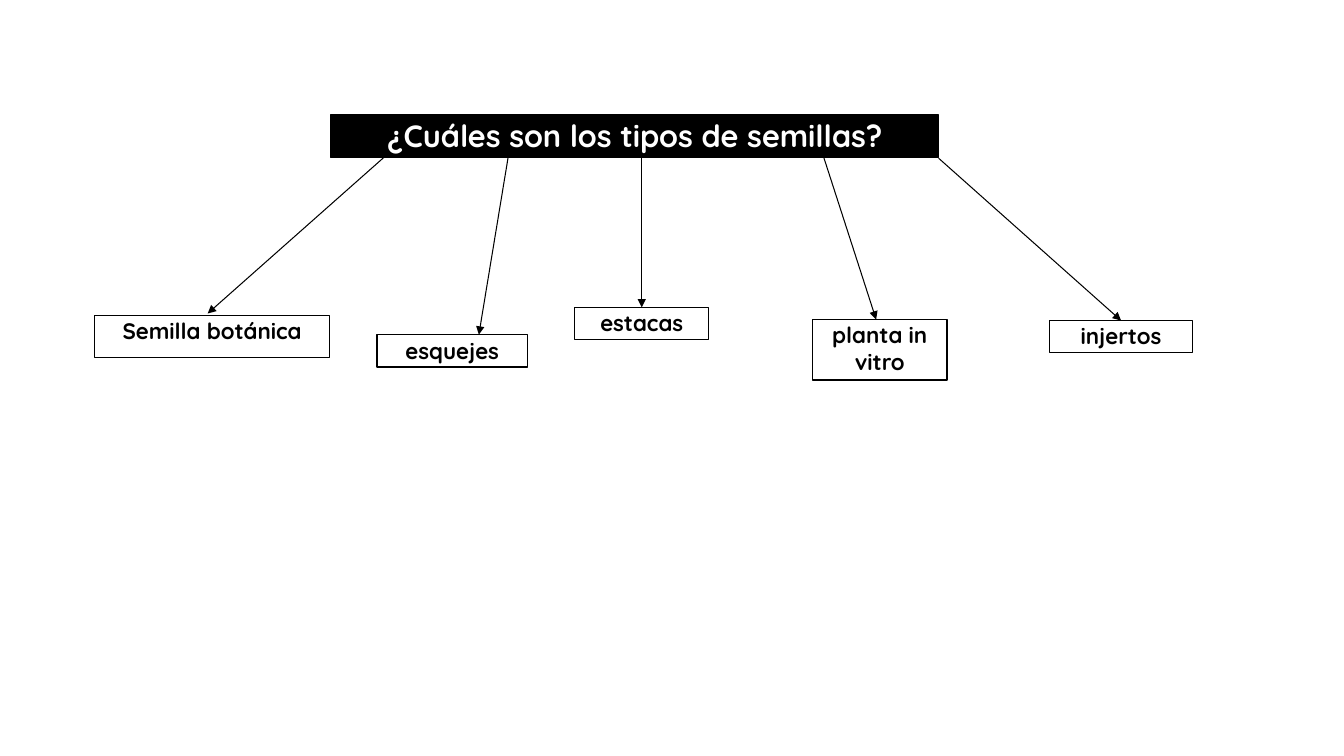
from pptx import Presentation
from pptx.dml.color import RGBColor as Rgb
from pptx.enum.shapes import MSO_CONNECTOR as Link, MSO_SHAPE as Form
from pptx.enum.text import MSO_ANCHOR as Anchor, MSO_AUTO_SIZE as Auto, PP_ALIGN as Align
from pptx.oxml.ns import qn
from pptx.util import Inches, Pt
from lxml.etree import SubElement as Sub

theme = {
    "black": Rgb(0, 0, 0),
    "white": Rgb(255, 255, 255),
    "font": "Quicksand",
    "head": Pt(22),
    "body": Pt(16),
    "edge": Pt(1),
    "arrow": Pt(0.75),
}
frame = {
    "margin_left": Inches(0.05),
    "margin_right": Inches(0.05),
    "margin_top": Inches(0.02),
    "margin_bottom": Inches(0.02),
    "word_wrap": True,
    "auto_size": Auto.NONE,
    "vertical_anchor": Anchor.TOP,
}

deck = Presentation()
deck.slide_width, deck.slide_height = Inches(13.33), Inches(7.5)
slide = deck.slides.add_slide(deck.slide_layouts[5])
shapes = slide.shapes


def scale(*shares):
    sides = deck.slide_width, deck.slide_height
    return [round(sides[i % 2] * share / 100) for i, share in enumerate(shares)]


def dress(box, text, fill, ink, size):
    box.fill.solid()
    box.fill.fore_color.rgb = fill
    box.line.color.rgb = theme["black"]
    box.line.width = theme["edge"]
    for name, value in frame.items():
        setattr(box.text_frame, name, value)
    box.text_frame.text = text
    para = box.text_frame.paragraphs[0]
    para.alignment = Align.CENTER
    font = para.runs[0].font
    for name, value in {"name": theme["font"], "size": size, "bold": True}.items():
        setattr(font, name, value)
    font.color.rgb = ink


title = shapes.title
title.left, title.top, title.width, title.height = scale(24.61, 15.2, 45.24, 5.6)
dress(title, "¿Cuáles son los tipos de semillas?", theme["black"], theme["white"], theme["head"])

kinds = [
    ("Semilla botánica", (7.05, 41.73, 17.48, 5.6), (28.58, 20.8), (15.45, 41.47)),
    ("esquejes", (28.06, 44.27, 11.18, 4.27), (37.81, 20.8), (35.63, 44.27)),
    ("estacas", (42.76, 40.67, 9.98, 4.27), (47.75, 20), None),
    ("planta in vitro", (60.47, 42.27, 9.98, 8), (61.29, 20.8), (65.19, 42.27)),
    ("injertos", (78.09, 42.4, 10.65, 4.27), (69.84, 20.93), None),
]

for text, place, start, tip in kinds:
    box = shapes.add_shape(Form.RECTANGLE, *scale(*place))
    box.shadow.inherit = False
    dress(box, text, theme["white"], theme["black"], theme["body"])

    arrow = shapes.add_connector(Link.STRAIGHT, *scale(*start, *(tip or place[:2])))
    if tip is None:
        arrow.end_connect(box, 0)
    arrow.line.color.rgb = theme["black"]
    arrow.line.width = theme["arrow"]
    Sub(arrow.line._get_or_add_ln(), qn("a:tailEnd"), type="triangle")
    Sub(arrow._element.spPr, qn("a:effectLst"))

deck.save("out.pptx")
